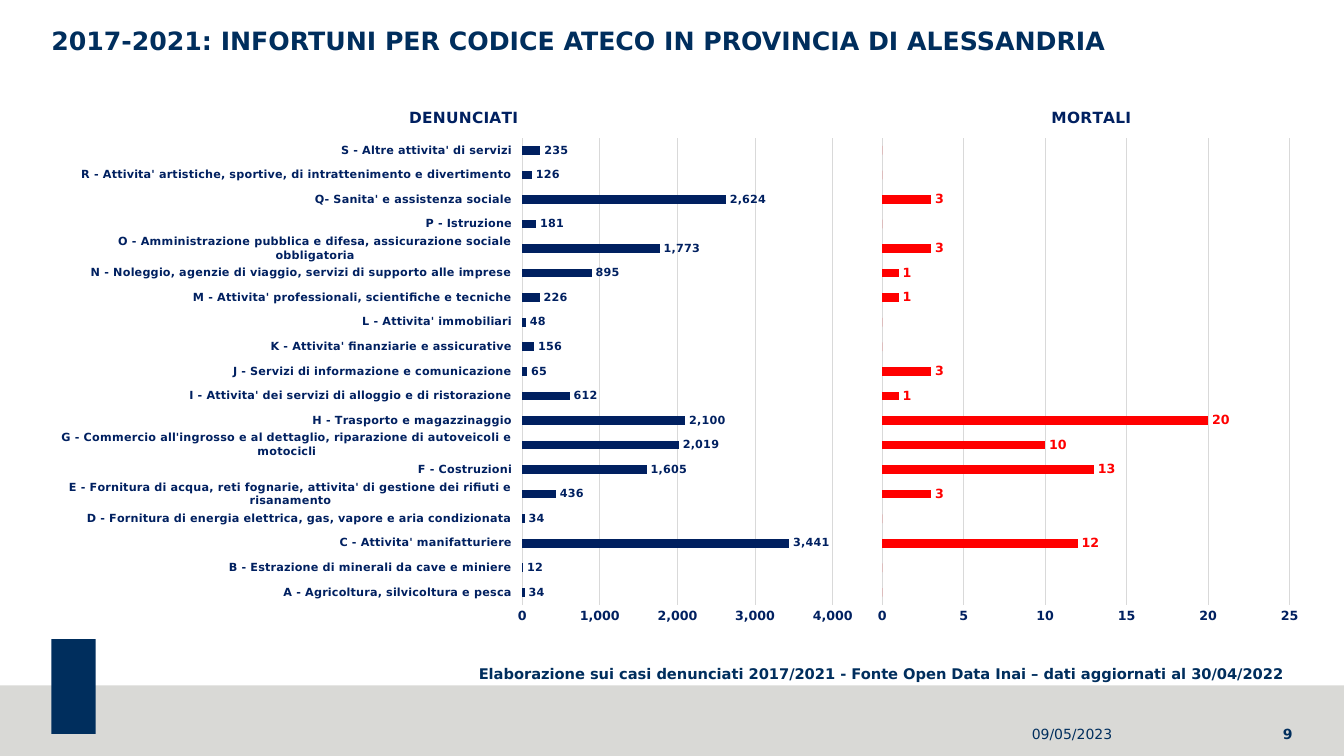
from lxml.etree import SubElement
from pptx import Presentation
from pptx.chart.data import CategoryChartData
from pptx.dml.color import RGBColor
from pptx.enum.chart import XL_CHART_TYPE, XL_LABEL_POSITION, XL_TICK_LABEL_POSITION, XL_TICK_MARK
from pptx.enum.shapes import MSO_SHAPE
from pptx.enum.text import MSO_ANCHOR, PP_ALIGN
from pptx.oxml.ns import qn
from pptx.util import Inches, Pt

# Content
FONT = "DejaVu Sans"
BLUE, NAVY, RED, GREY, GRID = "002E5D", "002060", "FF0000", "D9D9D6", "D9D9D9"
TITLE = "2017-2021: INFORTUNI PER CODICE ATECO IN PROVINCIA DI ALESSANDRIA"
SOURCE = "Elaborazione sui casi denunciati 2017/2021 - Fonte Open Data Inai – dati aggiornati al 30/04/2022"

# Sector, reported injuries, fatal injuries
SECTORS = [
    ("A - Agricoltura, silvicoltura e pesca", 34, 0),
    ("B - Estrazione di minerali da cave e miniere", 12, 0),
    ("C - Attivita' manifatturiere", 3441, 12),
    ("D - Fornitura di energia elettrica, gas, vapore e aria condizionata", 34, 0),
    ("E - Fornitura di acqua, reti fognarie, attivita' di gestione dei rifiuti e risanamento", 436, 3),
    ("F - Costruzioni", 1605, 13),
    ("G - Commercio all'ingrosso e al dettaglio, riparazione di autoveicoli e motocicli", 2019, 10),
    ("H - Trasporto e magazzinaggio", 2100, 20),
    ("I - Attivita' dei servizi di alloggio e di ristorazione", 612, 1),
    ("J - Servizi di informazione e comunicazione", 65, 3),
    ("K - Attivita' finanziarie e assicurative", 156, 0),
    ("L - Attivita' immobiliari", 48, 0),
    ("M - Attivita' professionali, scientifiche e tecniche", 226, 1),
    ("N - Noleggio, agenzie di viaggio, servizi di supporto alle imprese", 895, 1),
    ("O - Amministrazione pubblica e difesa, assicurazione sociale obbligatoria", 1773, 3),
    ("P - Istruzione", 181, 0),
    ("Q- Sanita' e assistenza sociale", 2624, 3),
    ("R - Attivita' artistiche, sportive, di intrattenimento e divertimento", 126, 0),
    ("S - Altre attivita' di servizi", 235, 0),
]
NAMES, REPORTED, FATAL = zip(*SECTORS)

# Chart frames, with the left and right edges of each plot, in inches
CHART_TOP, CHART_HEIGHT = 0.82, 5.48
PLOT_TOP, PLOT_BOTTOM, HEADING_TOP = 1.37, 6.0, 1.03
CHARTS = [
    dict(heading="DENUNCIATI", categories=NAMES, values=REPORTED, color=NAVY, label_size=8,
         number_format="#,##0", left=0.51, width=8.11, plot=(5.18, 8.26), heading_left=4.03,
         maximum=4000, step=1000, show_names=True),
    dict(heading="MORTALI", categories=[str(n + 1) for n in range(len(FATAL))], values=FATAL,
         color=RED, label_size=9, number_format="#,##0;;", left=8.62, width=4.34,
         plot=(8.75, 12.79), heading_left=10.4, maximum=25, step=5, show_names=False),
]


def rgb(color):
    return RGBColor.from_string(color)


def style_font(font, size, color, bold=True):
    font.name, font.size, font.bold = FONT, Pt(size), bold
    font.color.rgb = rgb(color)


def add_run(paragraph, text, size, color, bold=True):
    run = paragraph.add_run()
    run.text = text
    style_font(run.font, size, color, bold)


def clear_margins(frame):
    frame.margin_left = frame.margin_right = frame.margin_top = frame.margin_bottom = 0


def add_block(slide, left, top, width, height, color):
    block = slide.shapes.add_shape(MSO_SHAPE.RECTANGLE, Inches(left), Inches(top),
                                   Inches(width), Inches(height))
    block.shadow.inherit = False
    block.fill.solid()
    block.fill.fore_color.rgb = rgb(color)
    block.line.fill.background()


def add_text(slide, left, top, width, height, text, size, bold=True, footer=False):
    box = slide.shapes.add_textbox(Inches(left), Inches(top), Inches(width), Inches(height))
    frame = box.text_frame
    frame.word_wrap = False
    if footer:
        frame.word_wrap = True
        clear_margins(frame)
        frame.vertical_anchor = MSO_ANCHOR.MIDDLE
        frame.paragraphs[0].alignment = PP_ALIGN.RIGHT
    add_run(frame.paragraphs[0], text, size, BLUE, bold)


def place(element, values, before, inner=False):
    """Give a chart part a manual layout, as fractions of the chart frame."""
    for old in element.findall(qn("c:layout")):
        element.remove(old)
    layout = SubElement(element, qn("c:layout"))
    manual = SubElement(layout, qn("c:manualLayout"))
    if inner:
        SubElement(manual, qn("c:layoutTarget")).set("val", "inner")
    for mode in ("xMode", "yMode"):
        SubElement(manual, qn("c:" + mode)).set("val", "edge")
    for name, value in zip("xywh", values):
        SubElement(manual, qn("c:" + name)).set("val", f"{value:.4f}")
    element.insert(before, layout)


def add_bar_chart(slide, heading, categories, values, color, label_size, number_format,
                  left, width, plot, heading_left, maximum, step, show_names):
    data = CategoryChartData(number_format="#,##0")
    data.categories = categories
    data.add_series("Series 1", values)
    chart = slide.shapes.add_chart(XL_CHART_TYPE.BAR_CLUSTERED, Inches(left), Inches(CHART_TOP),
                                   Inches(width), Inches(CHART_HEIGHT), data).chart
    chart.has_legend = False
    chart.font.name, chart.font.size = "Calibri", Pt(10)

    # Heading and plot position
    chart.has_title = True
    title = chart.chart_title
    add_run(title.text_frame.paragraphs[0], heading, 11, NAVY)
    title.include_in_layout = False
    place(title._element, ((heading_left - left) / width,
                           (HEADING_TOP - CHART_TOP) / CHART_HEIGHT), before=1)
    plot_area = chart._chartSpace.chart.plotArea
    place(plot_area, ((plot[0] - left) / width, (PLOT_TOP - CHART_TOP) / CHART_HEIGHT,
                      (plot[1] - plot[0]) / width, (PLOT_BOTTOM - PLOT_TOP) / CHART_HEIGHT),
          before=0, inner=True)

    # Bars and labels
    bars = chart.plots[0]
    bars.gap_width, bars.vary_by_categories = 182, False
    series = bars.series[0]
    series.format.fill.solid()
    series.format.fill.fore_color.rgb = rgb(color)
    labels = series.data_labels
    labels.show_value = True
    labels.number_format, labels.number_format_is_linked = number_format, False
    labels.position = XL_LABEL_POSITION.OUTSIDE_END
    style_font(labels.font, label_size, color)

    # Axes
    names, amounts = chart.category_axis, chart.value_axis
    for axis in (names, amounts):
        axis.major_tick_mark = axis.minor_tick_mark = XL_TICK_MARK.NONE
    names.visible = show_names
    if show_names:
        names.tick_label_position = XL_TICK_LABEL_POSITION.LOW
        names.format.line.color.rgb = rgb(GRID)
        names.format.line.width = Pt(0.75)
        style_font(names.tick_labels.font, 8, NAVY)
    amounts.minimum_scale, amounts.maximum_scale, amounts.major_unit = 0, maximum, step
    amounts.format.line.fill.background()
    amounts.major_gridlines.format.line.color.rgb = rgb(GRID)
    amounts.major_gridlines.format.line.width = Pt(0.75)
    amounts.tick_labels.number_format = "#,##0"
    amounts.tick_labels.number_format_is_linked = False
    style_font(amounts.tick_labels.font, 9, NAVY)


def main():
    presentation = Presentation()
    presentation.slide_width, presentation.slide_height = Inches(13.33), Inches(7.5)
    slide = presentation.slides.add_slide(presentation.slide_layouts[5])

    # Footer band and accent block
    add_block(slide, 0, 6.8, 13.33, 0.7, GREY)
    add_block(slide, 0.51, 6.34, 0.44, 0.94, BLUE)

    # Title
    title = slide.shapes.title
    title.left, title.top, title.width, title.height = map(Inches, (0.51, 0.28, 12.32, 0.76))
    frame = title.text_frame
    clear_margins(frame)
    frame.vertical_anchor = MSO_ANCHOR.TOP
    frame.paragraphs[0].alignment = PP_ALIGN.LEFT
    frame.paragraphs[0].line_spacing = 0.9
    add_run(frame.paragraphs[0], TITLE, 18, BLUE)

    # Source note, date and page number
    add_text(slide, 4.65, 6.55, 8.52, 0.28, SOURCE, 10.5)
    add_text(slide, 9.45, 7.08, 1.58, 0.4, "09/05/2023", 10, bold=False, footer=True)
    add_text(slide, 11.23, 7.08, 1.59, 0.4, "9", 10, footer=True)

    for chart in CHARTS:
        add_bar_chart(slide, **chart)
    presentation.save("out.pptx")


if __name__ == "__main__":
    main()
